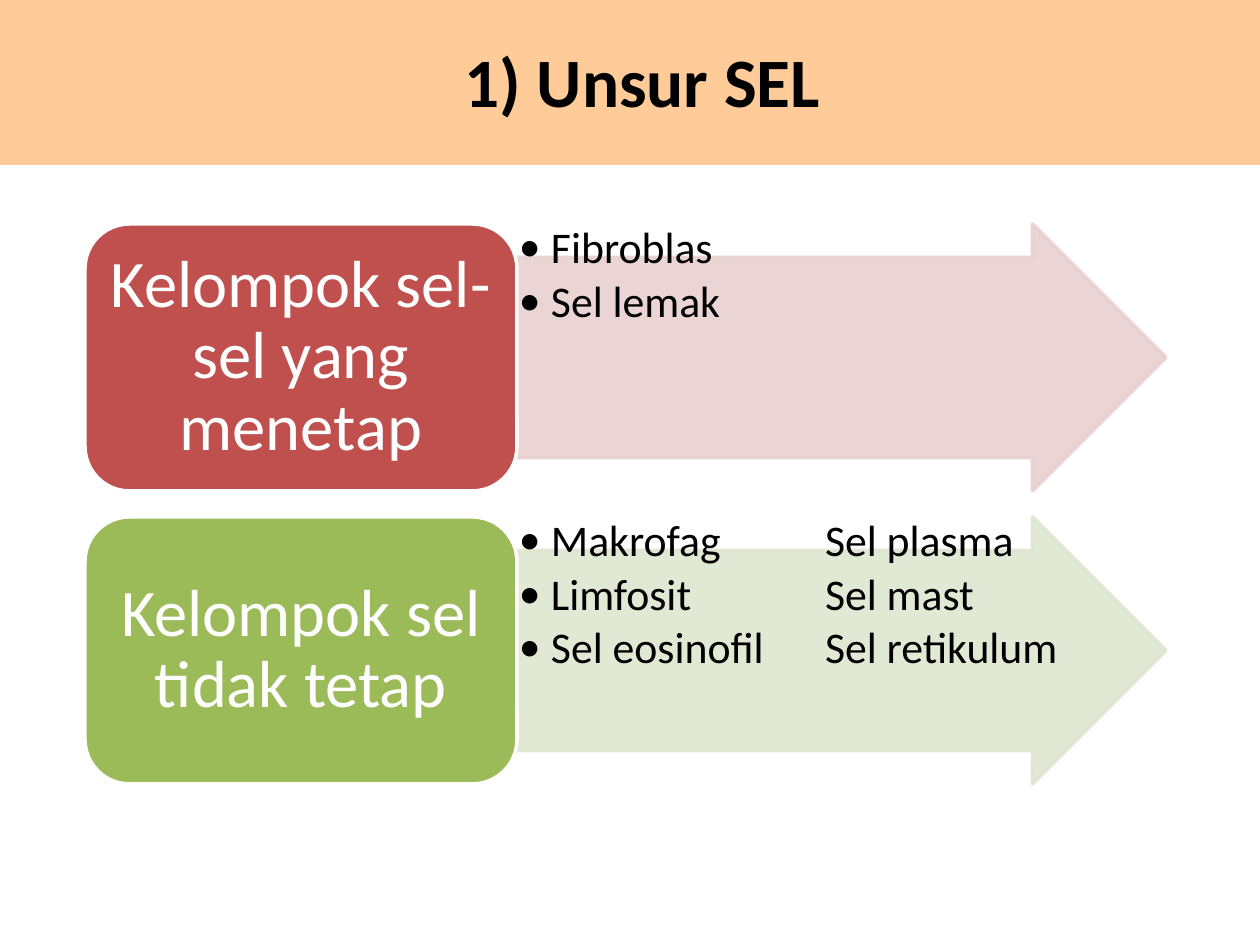
from lxml import etree
from pptx import Presentation
from pptx import util as u
from pptx.dml.color import RGBColor
from pptx.enum import shapes, text
from pptx.oxml.ns import qn

FONT = "Calibri"
ROWS = [
    ("Kelompok sel-sel yang menetap", "C0504D", "E8D0D0",
     ["Fibroblas", "Sel lemak"]),
    ("Kelompok sel tidak tetap", "9BBB59", "DEE7D1",
     ["Makrofag\tSel plasma", "Limfosit\tSel mast",
      "Sel eosinofil\tSel retikulum"]),
]


def px(n):
    return u.Emu(round(n * 914400 / 126))


def tint(fill, code):
    fill.solid()
    fill.fore_color.rgb = RGBColor.from_string(code)


def fade(node, part):
    for color in node.iter(qn("a:srgbClr")):
        etree.SubElement(color, qn("a:alpha"), val=str(part * 1000))


def draw(slide, kind, box, color, edge=None):
    shape = slide.shapes.add_shape(kind, *map(px, box))
    shape.shadow.inherit = False
    tint(shape.fill, color)
    if edge:
        tint(shape.line.fill, edge)
        shape.line.width = u.Pt(2)
    else:
        shape.line.fill.background()
    return shape


def inset(frame, side, top):
    frame.word_wrap = True
    frame.margin_left = frame.margin_right = px(side)
    frame.margin_top = frame.margin_bottom = px(top)


def style(par, size, color, bold=False):
    for run in par.runs:
        run.font.name = FONT
        run.font.size = u.Pt(size)
        run.font.bold = bold
        run.font.color.rgb = RGBColor.from_string(color)


def center(frame, size, color, bold=False):
    frame.vertical_anchor = text.MSO_ANCHOR.MIDDLE
    par = frame.paragraphs[0]
    par.alignment = text.PP_ALIGN.CENTER
    style(par, size, color, bold)
    return par


def bullet(par):
    props = par._p.get_or_add_pPr()
    props.set("marL", str(px(32)))
    props.set("indent", str(px(-32)))
    etree.SubElement(props, qn("a:buFont"), typeface=FONT)
    etree.SubElement(props, qn("a:buChar"), char="•")
    if "\t" in par.text:
        tabs = etree.SubElement(props, qn("a:tabLst"))
        etree.SubElement(tabs, qn("a:tab"), pos=str(px(306)), algn="l")


def header(slide, box):
    x, y, w, h = box
    draw(slide, shapes.MSO_SHAPE.RECTANGLE, box, "FFCC99")
    title = slide.shapes.add_textbox(
        *map(px, (x + 37, y + 45, w - 74, 69))).text_frame
    title.text = "1) Unsur SEL"
    inset(title, 0, 0)
    par = center(title, 39.6, "000000", True)
    par._p.get_or_add_pPr().set("marL", str(px(25)))


def group(slide, box, label, dark, pale, items):
    x, y, w, h = box
    split = 432
    side = (x + split, y, w - split, h)

    arrow = draw(slide, shapes.MSO_SHAPE.RIGHT_ARROW, side, pale, pale)
    arrow.adjustments[0] = 0.75
    arrow.adjustments[1] = 0.5
    fade(arrow._element.spPr, 90)

    notes = slide.shapes.add_textbox(*map(px, side)).text_frame
    notes.text = "\n".join(items)
    inset(notes, 2, 2)
    for par in notes.paragraphs:
        par.line_spacing = 0.9
        par.space_after = u.Pt(3.5)
        bullet(par)
        style(par, 25, "000000")

    card = draw(slide, shapes.MSO_SHAPE.ROUNDED_RECTANGLE,
                (x, y, split, h), dark, "FFFFFF")
    card.text_frame.text = label
    inset(card.text_frame, 7, 0)
    center(card.text_frame, 38, "FFFFFF").line_spacing = 0.9


def main():
    deck = Presentation()
    deck.slide_width, deck.slide_height = px(1260), px(945)
    slide = deck.slides.add_slide(deck.slide_layouts[6])
    header(slide, (0, 0, 1260, 165))
    for i, row in enumerate(ROWS):
        group(slide, (85, 224 + i * 293, 1081, 267), *row)
    deck.save("out.pptx")


if __name__ == "__main__":
    main()
